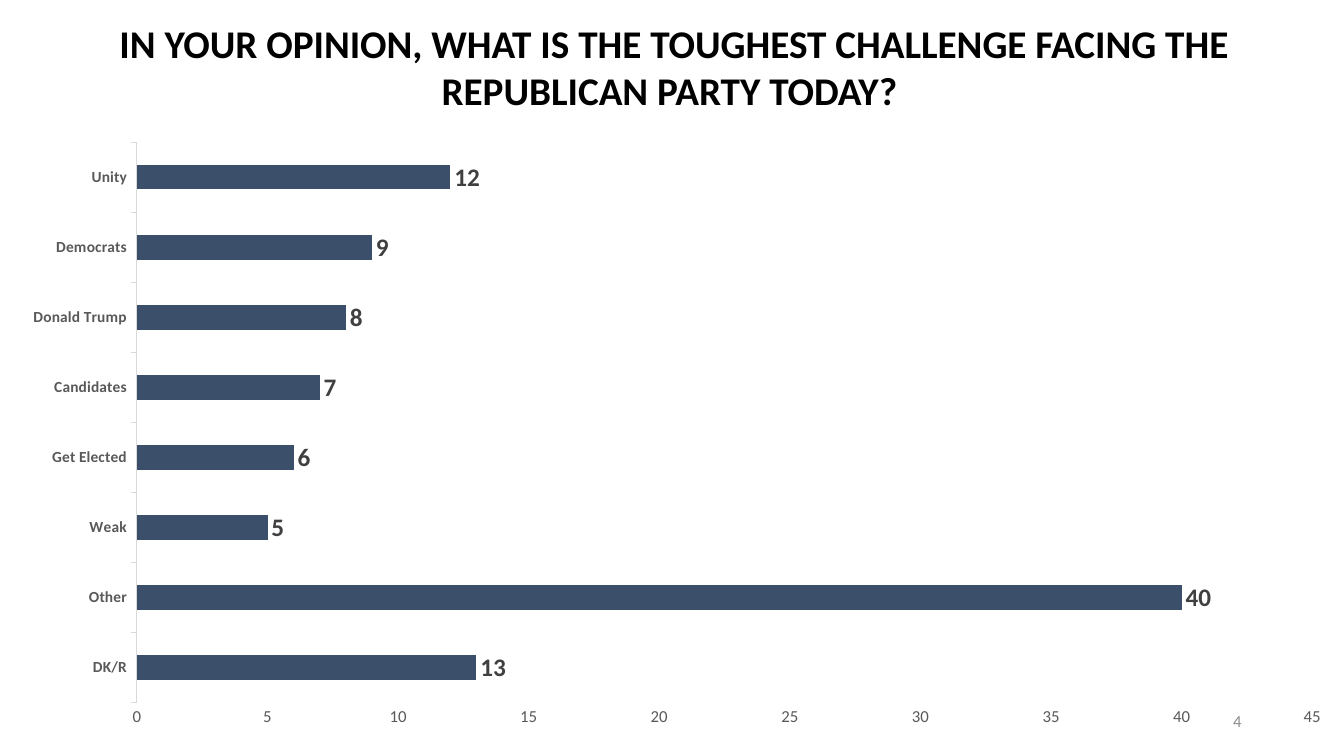
import pptx
import pptx.chart.data
import pptx.dml.color
import pptx.enum.chart
import pptx.enum.text
import pptx.oxml
import pptx.oxml.ns
import pptx.util
from pptx.util import Pt

FONT = "Calibri"
COLORS = {"title": "000000", "bar": "3B4F6A", "value": "404040",
          "axis": "595959", "line": "D9D9D9", "number": "8C8C8C"}
CHALLENGES = [("DK/R", 13), ("Other", 40), ("Weak", 5), ("Get Elected", 6),
              ("Candidates", 7), ("Donald Trump", 8), ("Democrats", 9), ("Unity", 12)]
PLOT_AREA = {"x": 0.103, "y": 0.018, "w": 0.884, "h": 0.91}


def rgb(name):
    return pptx.dml.color.RGBColor.from_string(COLORS[name])


def style_font(font, size, color, bold=False):
    font.name = FONT
    font.size = Pt(size)
    font.bold = bold
    font.color.rgb = rgb(color)


def place(sp, left, top, width, height):
    sp.left, sp.top, sp.width, sp.height = Pt(left), Pt(top), Pt(width), Pt(height)


def fill_text(sp, text, size, color, align, anchor, bold=False):
    tf = sp.text_frame
    tf.text = text
    tf.word_wrap = True
    tf.auto_size = pptx.enum.text.MSO_AUTO_SIZE.NONE
    tf.vertical_anchor = anchor
    p = tf.paragraphs[0]
    p.alignment = align
    p.line_spacing = 1.0
    style_font(p.runs[0].font, size, color, bold)


def add_title(s, text):
    sp = s.shapes.title
    place(sp, 2.9, 10.1, 956.9, 74.9)
    fill_text(sp, text, 28, "title", pptx.enum.text.PP_ALIGN.CENTER,
              pptx.enum.text.MSO_ANCHOR.TOP, bold=True)


def add_page_number(s, number):
    sp = s.shapes.add_textbox(Pt(678), Pt(500.5), Pt(216), Pt(28.75))
    fill_text(sp, str(number), 12, "number", pptx.enum.text.PP_ALIGN.RIGHT,
              pptx.enum.text.MSO_ANCHOR.MIDDLE)


def set_plot_area(chart):
    """Fix the inner plot area as fractions of the chart frame."""
    plot_area = chart.plots[0]._element.getparent()
    for old in plot_area.findall(pptx.oxml.ns.qn("c:layout")):
        plot_area.remove(old)
    modes = "".join(f'<c:{k}Mode val="edge"/>' for k in "xy")
    sizes = "".join(f'<c:{k} val="{v}"/>' for k, v in PLOT_AREA.items())
    plot_area.insert(0, pptx.oxml.parse_xml(
        f'<c:layout {pptx.oxml.ns.nsdecls("c")}><c:manualLayout>'
        f'<c:layoutTarget val="inner"/>{modes}{sizes}</c:manualLayout></c:layout>'))


def style_axes(chart):
    tick = pptx.enum.chart.XL_TICK_MARK
    cat, val = chart.category_axis, chart.value_axis
    for axis, size, bold, mark in ((cat, 11, True, tick.OUTSIDE), (val, 12, False, tick.NONE)):
        axis.has_major_gridlines = False
        axis.major_tick_mark = mark
        axis.minor_tick_mark = tick.NONE
        style_font(axis.tick_labels.font, size, "axis", bold)
    cat.format.line.color.rgb = rgb("line")
    cat.format.line.width = Pt(0.75)
    val.format.line.fill.background()
    val.minimum_scale, val.maximum_scale, val.major_unit = 0, 45, 5


def add_bar_chart(s, items):
    data = pptx.chart.data.CategoryChartData()
    data.categories = [name for name, _ in items]
    data.add_series("Series 1", [value for _, value in items])
    chart = s.shapes.add_chart(pptx.enum.chart.XL_CHART_TYPE.BAR_CLUSTERED,
                               Pt(0), Pt(93.6), Pt(949.7), Pt(439.9), data).chart
    chart.has_legend = False
    chart.has_title = False
    style_font(chart.font, 10, "title")
    plot = chart.plots[0]
    plot.gap_width = 182
    plot.vary_by_categories = False
    fill = plot.series[0].format.fill
    fill.solid()
    fill.fore_color.rgb = rgb("bar")
    labels = plot.series[0].data_labels
    labels.show_value = True
    labels.position = pptx.enum.chart.XL_LABEL_POSITION.OUTSIDE_END
    style_font(labels.font, 18, "value", bold=True)
    style_axes(chart)
    set_plot_area(chart)


def main():
    prs = pptx.Presentation()
    prs.slide_width, prs.slide_height = Pt(960), Pt(540)
    s = prs.slides.add_slide(prs.slide_layouts[5])
    add_title(s, "IN YOUR OPINION, WHAT IS THE TOUGHEST CHALLENGE FACING THE "
                 "REPUBLICAN PARTY TODAY? ")
    add_page_number(s, 4)
    add_bar_chart(s, CHALLENGES)
    prs.save("out.pptx")


if __name__ == "__main__":
    main()
